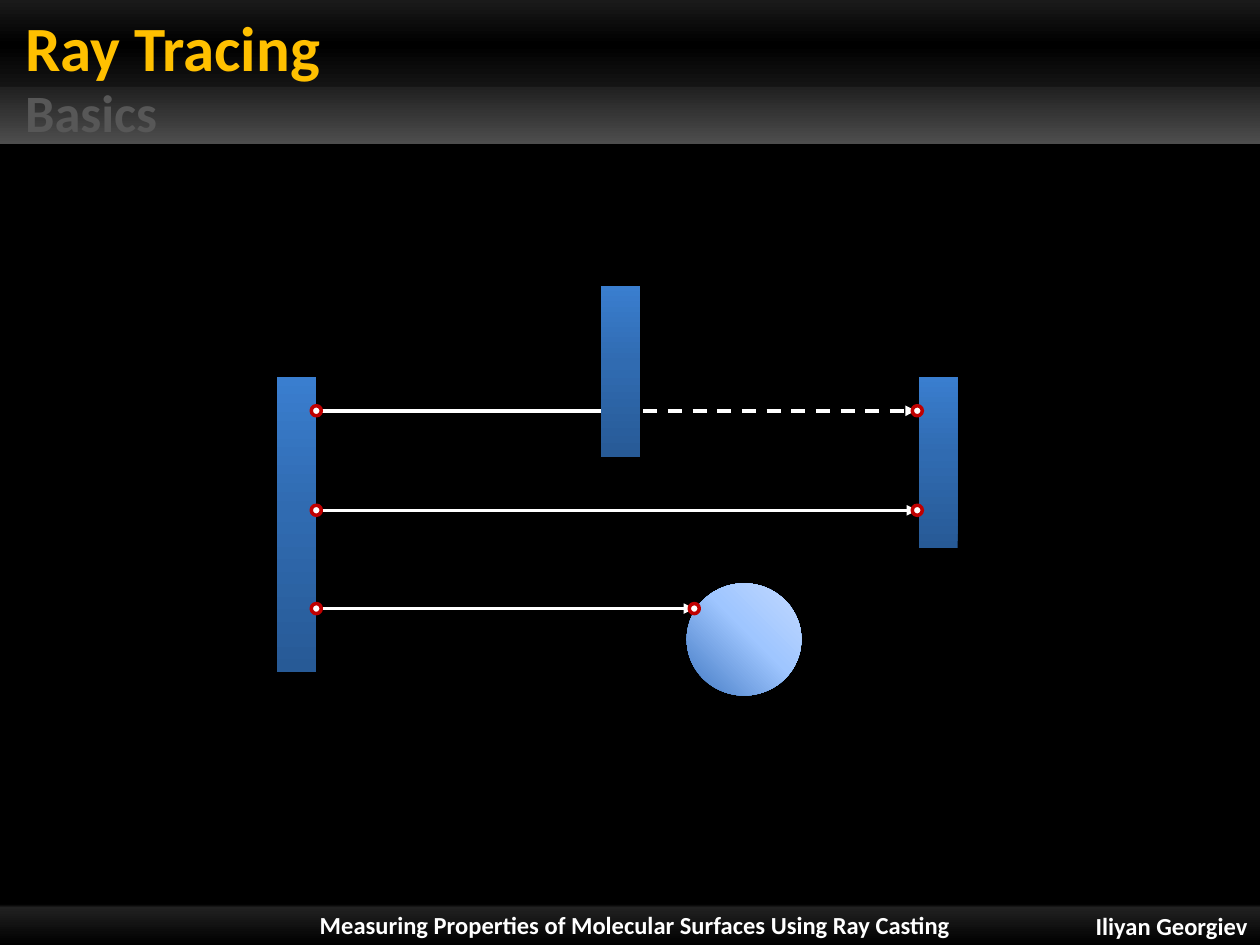
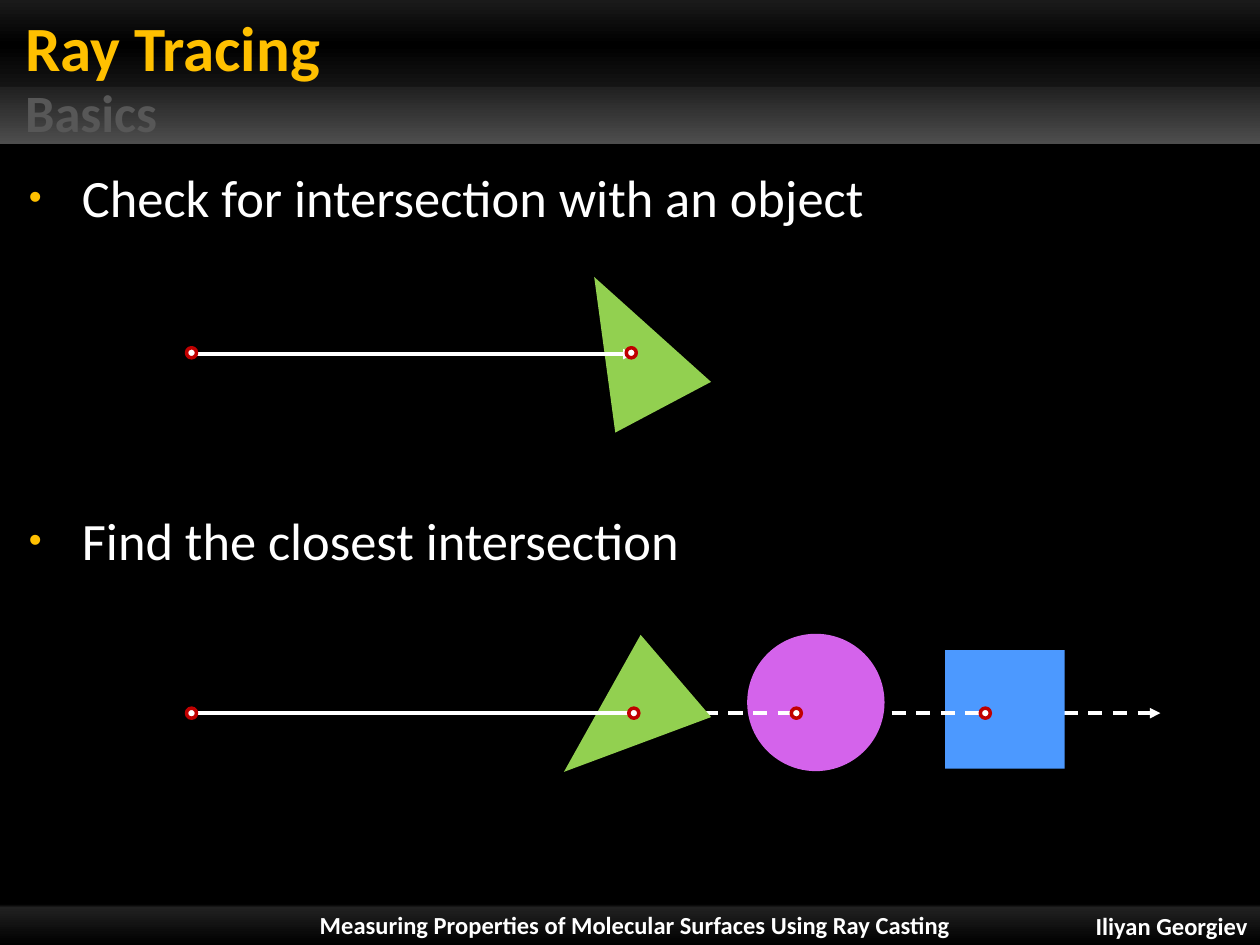
"""Build two slides on the basics of ray tracing."""
from lxml.etree import SubElement
from pptx import Presentation
from pptx.dml.color import RGBColor
from pptx.enum.dml import MSO_LINE
from pptx.enum.shapes import MSO_CONNECTOR, MSO_SHAPE
from pptx.enum.text import MSO_ANCHOR, PP_ALIGN
from pptx.oxml import parse_xml
from pptx.oxml.ns import nsdecls, qn
from pptx.util import Inches, Pt

FONT = "Calibri"
WHITE, BLACK, GOLD, RED = "FFFFFF", "000000", "FFC000", "C00000"
GREEN, PURPLE, BLUE, FAINT = "92D050", "D463EB", "4C99FF", "575757"
DOWN, UP = '<a:lin ang="5400000" scaled="0"/>', '<a:lin ang="16200000" scaled="0"/>'
TOP_RIGHT = '<a:path path="circle"><a:fillToRect l="100000" b="100000"/></a:path>'
HEADER = ([(0, "1A1A1A"), (31, BLACK), (60, "141414"), (61, "212121"), (100, "4D4D4D")], DOWN)
FOOTER = ([(5, BLACK), (10, "141414"), (11, "212121"), (100, BLACK)], DOWN)
WALL = ([(0, "275A96"), (55, "306BB1"), (100, "3A7ECF")], UP)
BALL = ([(0, "C3D9FF"), (45, "9FC6FF"), (100, "4279C3")], TOP_RIGHT)
DOT = 0.08

LABELS = [
    ("Iliyan Georgiev", (8.15, 7.19, 1.85, 0.31), 0.1, 14, WHITE, PP_ALIGN.RIGHT, MSO_ANCHOR.MIDDLE),
    ("Measuring Properties of Molecular Surfaces Using Ray Casting",
     (1.4, 7.17, 7.28, 0.34), 0.1, 14, WHITE, PP_ALIGN.CENTER, MSO_ANCHOR.MIDDLE),
    ("Ray Tracing", (0, 0, 6.6, 0.67), 0.2, 36, GOLD, PP_ALIGN.LEFT, MSO_ANCHOR.BOTTOM),
    ("Basics", (0, 0.65, 6.71, 0.47), 0.2, 30, FAINT, PP_ALIGN.LEFT, MSO_ANCHOR.MIDDLE),
]


def add_part(slide, kind, box, fill, rotation=0, outline=None):
    """Add a preset shape with a plain colour or a (stops, direction) gradient."""
    part = slide.shapes.add_shape(kind, *map(Inches, box))
    part.shadow.inherit = False
    part.rotation = rotation
    if isinstance(fill, str):
        part.fill.solid()
        part.fill.fore_color.rgb = RGBColor.from_string(fill)
    else:
        stops, direction = fill
        marks = "".join(f'<a:gs pos="{at * 1000}"><a:srgbClr val="{color}"/></a:gs>' for at, color in stops)
        part._element.spPr.insert(2, parse_xml(
            f'<a:gradFill {nsdecls("a")} rotWithShape="1"><a:gsLst>{marks}</a:gsLst>{direction}</a:gradFill>'))
    if outline:
        part.line.color.rgb = RGBColor.from_string(outline)
        part.line.width = Pt(2)
    else:
        part.line.fill.background()


def add_ray(slide, start, end, y, dashed=False, arrow=True):
    """Add a horizontal white ray from start to end."""
    ray = slide.shapes.add_connector(MSO_CONNECTOR.STRAIGHT, *map(Inches, (start, y, end, y)))
    ray.line.color.rgb = RGBColor.from_string(WHITE)
    ray.line.width = Pt(2)
    if dashed:
        ray.line.dash_style = MSO_LINE.DASH
    if arrow:
        SubElement(ray.line._get_or_add_ln(), qn("a:tailEnd"), type="triangle")
    SubElement(ray._element.spPr, qn("a:effectLst"))


prs = Presentation()
prs.slide_width, prs.slide_height = Inches(10), Inches(7.5)
visibility, intersection = [prs.slides.add_slide(prs.slide_layouts[6]) for _ in range(2)]

for slide in (visibility, intersection):
    slide.background.fill.solid()
    slide.background.fill.fore_color.rgb = RGBColor.from_string(BLACK)
    add_part(slide, MSO_SHAPE.RECTANGLE, (0, 0, 10, 1.14), HEADER)
    add_part(slide, MSO_SHAPE.RECTANGLE, (0, 7.16, 10, 0.34), FOOTER)
    for text, box, inset, size, color, align, anchor in LABELS:
        frame = slide.shapes.add_textbox(*map(Inches, box)).text_frame
        frame.word_wrap = True
        frame.vertical_anchor = anchor
        frame.margin_left = Inches(inset)
        frame.margin_top = frame.margin_bottom = 0
        label = frame.paragraphs[0]
        label.text = text
        label.alignment = align
        label.font.name, label.font.size, label.font.bold = FONT, Pt(size), True
        label.font.color.rgb = RGBColor.from_string(color)

add_part(visibility, MSO_SHAPE.RECTANGLE, (7.29, 2.99, 0.31, 1.36), WALL)
add_part(visibility, MSO_SHAPE.OVAL, (5.45, 4.63, 0.91, 0.89), BALL)
add_part(visibility, MSO_SHAPE.RECTANGLE, (2.2, 2.99, 0.31, 2.34), WALL)
add_ray(visibility, 2.55, 4.91, 3.26)
add_ray(visibility, 4.91, 7.27, 3.26, dashed=True)
add_ray(visibility, 2.56, 7.28, 4.05)
add_ray(visibility, 2.56, 5.51, 4.83)
add_part(visibility, MSO_SHAPE.RECTANGLE, (4.77, 2.27, 0.31, 1.36), WALL)

topics = intersection.shapes.add_textbox(*map(Inches, (0, 1.15, 9.99, 6.02))).text_frame
topics.word_wrap = True
topics.margin_left = topics.margin_top = Inches(0.16)
for index, text in enumerate(["Check for intersection with an object", "Find the closest intersection"]):
    topic = topics.add_paragraph() if index else topics.paragraphs[0]
    topic.text = text
    topic.space_before = Pt(160 * index)
    props = topic._p.get_or_add_pPr()
    props.set("marL", str(Inches(0.49)))
    props.set("indent", str(Inches(-0.42)))
    SubElement(SubElement(props, qn("a:buClr")), qn("a:srgbClr"), val=GOLD)
    SubElement(props, qn("a:buSzPct"), val="70000")
    SubElement(props, qn("a:buFont"), typeface="Arial")
    SubElement(props, qn("a:buChar"), char="•")
    topic.font.name, topic.font.size = FONT, Pt(30)
    topic.font.color.rgb = RGBColor.from_string(WHITE)

add_part(intersection, MSO_SHAPE.ISOSCELES_TRIANGLE, (4.56, 2.13, 0.86, 1.17), GREEN, 332.1)
add_ray(intersection, 1.56, 5.03, 2.81)
for start, end, kind, box, fill, rotation in [
    (8.05, 9.21, MSO_SHAPE.RECTANGLE, (7.5, 5.16, 0.95, 0.94), BLUE, 0),
    (6.88, 7.81, MSO_SHAPE.OVAL, (5.93, 5.03, 1.09, 1.09), PURPLE, 0),
    (5.39, 6.33, MSO_SHAPE.ISOSCELES_TRIANGLE, (4.49, 5.16, 0.86, 1.17), GREEN, 229.4),
]:
    add_ray(intersection, start, end, 5.66, dashed=True, arrow=fill == BLUE)
    add_part(intersection, kind, box, fill, rotation)
add_ray(intersection, 1.57, 5.03, 5.66, arrow=False)

for slide, y, hits in [
    (visibility, 3.26, (2.51, 7.28)),
    (visibility, 4.05, (2.51, 7.28)),
    (visibility, 4.83, (2.51, 5.51)),
    (intersection, 2.8, (1.52, 5.01)),
    (intersection, 5.66, (1.52, 5.03, 6.32, 7.82)),
]:
    for x in hits:
        add_part(slide, MSO_SHAPE.OVAL, (x - DOT / 2, y - DOT / 2, DOT, DOT), WHITE, outline=RED)

prs.save("out.pptx")
